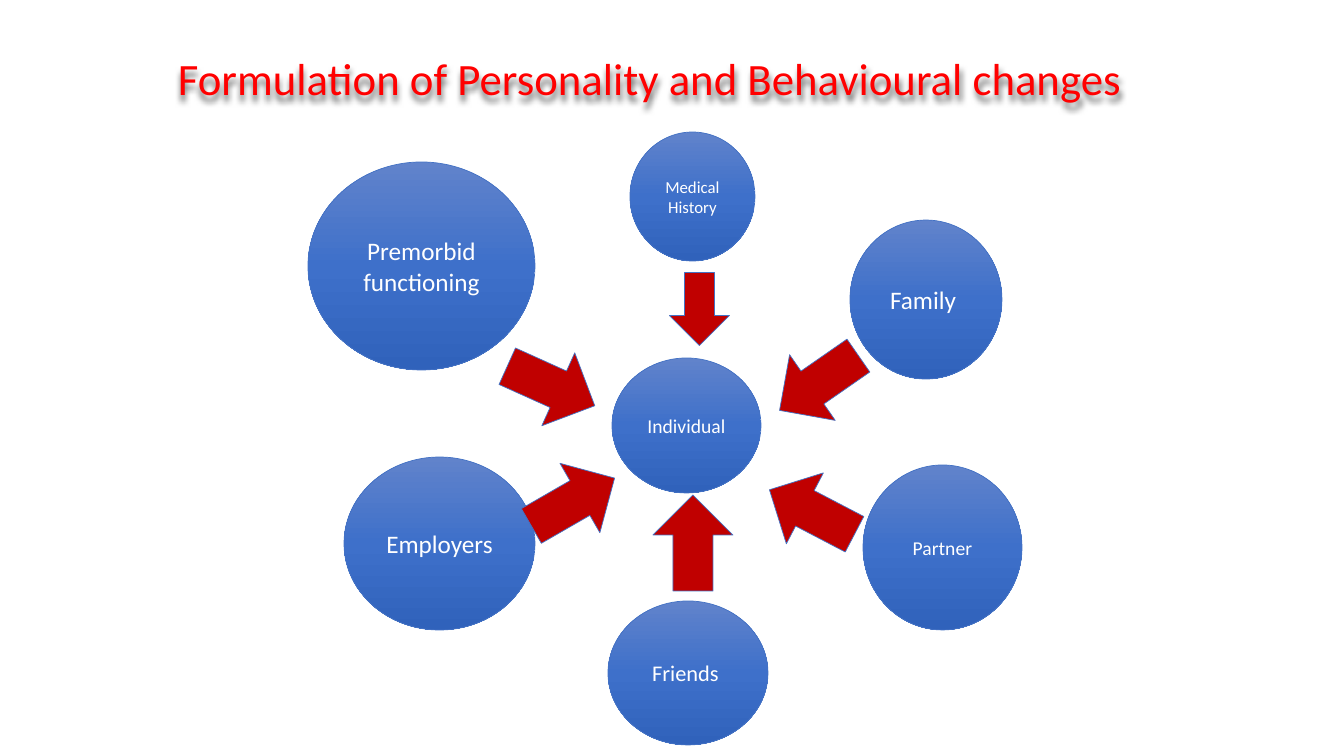
from copy import deepcopy

from lxml.etree import SubElement
from pptx import Presentation
from pptx.dml.color import RGBColor
from pptx.enum.shapes import MSO_SHAPE
from pptx.enum.text import MSO_ANCHOR, PP_ALIGN
from pptx.oxml.ns import qn
from pptx.util import Pt

EMU_PER_PX = 914400 / 100.8
FONT = "Calibri"
COLORS = {
    "title": "FF0000",
    "top": "6183CB",
    "middle": "3E70CA",
    "bottom": "3062BB",
    "outline": "4472C4",
    "arrow": "C00000",
    "label": "FFFFFF",
    "shadow": "000000",
}


def px(*lengths):
    return [round(length * EMU_PER_PX) for length in lengths]


def write(shape, text, size, color, alignment):
    frame = shape.text_frame
    frame.word_wrap = True
    frame.vertical_anchor = MSO_ANCHOR.MIDDLE
    para = frame.paragraphs[0]
    para.text = text
    para.alignment = alignment
    para.font.size = Pt(size)
    span = para.runs[0]
    span.font.size = Pt(size)
    span.font.name = FONT
    span.font.color.rgb = RGBColor.from_string(COLORS[color])
    return para


deck = Presentation()
deck.slide_width, deck.slide_height = px(1344, 756)
page = deck.slides.add_slide(deck.slide_layouts[6])

# Title with a soft shadow
title = page.shapes.add_textbox(*px(168, 30, 1008, 102))
heading = write(title, "Formulation of Personality and Behavioural changes",
                32, "title", PP_ALIGN.LEFT)
heading.line_spacing = 0.9
effects = SubElement(title._element.spPr, qn("a:effectLst"))
shadow = SubElement(effects, qn("a:outerShdw"), blurRad="50800",
                    dist="50800", dir="5400000", algn="t", rotWithShape="0")
shade = SubElement(shadow, qn("a:srgbClr"), val=COLORS["shadow"])
SubElement(shade, qn("a:alpha"), val="60000")

# Circles: label, font size, left, top, width, height
circles = [
    ("Individual", 14, 612, 358, 149, 135),
    ("Premorbid functioning", 18, 308, 162, 227, 208),
    ("Employers", 18, 344, 457, 191, 173),
    ("Friends ", 16, 608, 601, 160, 144),
    ("Family ", 18, 850, 220, 152, 159),
    ("Medical History", 12, 630, 132, 125, 129),
    ("Partner", 14, 863, 465, 159, 165),
]
for label, size, *place in circles:
    circle = page.shapes.add_shape(MSO_SHAPE.OVAL, *px(*place))
    circle.shadow.inherit = False
    circle.fill.gradient()
    circle.fill.gradient_angle = 270
    stop_list = circle._element.spPr.find(".//" + qn("a:gsLst"))
    stop_list.append(deepcopy(stop_list[0]))
    for index, (stop, name) in enumerate(
            zip(circle.fill.gradient_stops, ("top", "middle", "bottom"))):
        stop.position = index / 2
        stop.color.rgb = RGBColor.from_string(COLORS[name])
    circle.line.color.rgb = RGBColor.from_string(COLORS["outline"])
    circle.line.width = Pt(0.5)
    write(circle, label, size, "label", PP_ALIGN.CENTER)

# Arrows towards the individual: rotation, left, top, width, height
arrows = [
    (24.3, 503, 346, 96, 80),
    (270, 645, 503, 96, 80),
    (207.6, 764, 472, 96, 80),
    (145.2, 771, 343, 96, 80),
    (90, 663, 279, 73, 60),
    (330.1, 525, 462, 96, 80),
]
for rotation, *place in arrows:
    arrow = page.shapes.add_shape(MSO_SHAPE.RIGHT_ARROW, *px(*place))
    arrow.rotation = rotation
    arrow.shadow.inherit = False
    arrow.fill.solid()
    arrow.fill.fore_color.rgb = RGBColor.from_string(COLORS["arrow"])
    arrow.line.color.rgb = RGBColor.from_string(COLORS["outline"])
    arrow.line.width = Pt(0.5)

deck.save("out.pptx")
